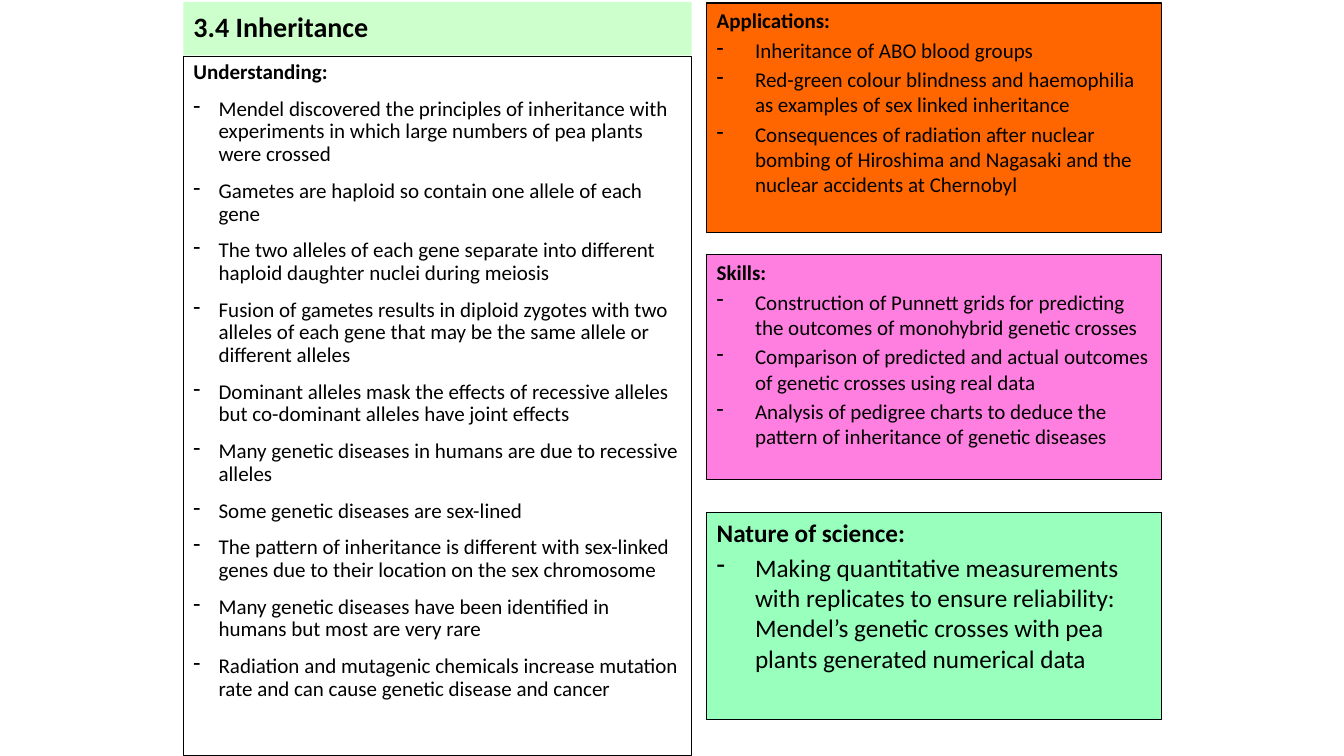
from dataclasses import dataclass
from typing import Any

from lxml import etree
from pptx import Presentation
from pptx import util as u
from pptx.dml.color import RGBColor
from pptx.enum import shapes, text
from pptx.oxml.ns import qn


@dataclass(frozen=True)
class Theme:
    font: str = "Calibri"
    ink: str = "000000"
    title_fill: str = "CCFFCC"
    applications_fill: str = "FF6600"
    skills_fill: str = "FF7FE1"
    nature_fill: str = "98FFBC"
    title_size: int = 20
    nature_size: int = 18
    body_size: int = 15
    border: float = 0.75


THEME = Theme()


@dataclass(frozen=True)
class Panel:
    heading: str
    points: tuple[str, ...]
    left: float
    top: float
    width: float
    height: float
    fill: str | None
    size: int = THEME.body_size
    indent: float = 0.38
    space_before: float = 3
    line_spacing: float = 1.0
    outlined: bool = True
    anchor: Any = text.MSO_ANCHOR.TOP


# Column positions
LEFT = {"left": 1.82, "width": 5.04, "line_spacing": 0.9}
RIGHT = {"left": 7.01, "width": 4.51}

PANELS = (
    Panel("3.4 Inheritance", (), top=0.02, height=0.53, fill=THEME.title_fill,
          size=THEME.title_size, outlined=False, anchor=text.MSO_ANCHOR.MIDDLE, **LEFT),
    Panel("Understanding:", (
        "Mendel discovered the principles of inheritance with experiments in which "
        "large numbers of pea plants were crossed",
        "Gametes are haploid so contain one allele of each gene",
        "The two alleles of each gene separate into different haploid daughter nuclei "
        "during meiosis",
        "Fusion of gametes results in diploid zygotes with two alleles of each gene "
        "that may be the same allele or different alleles",
        "Dominant alleles mask the effects of recessive alleles but co-dominant "
        "alleles have joint effects",
        "Many genetic diseases in humans are due to recessive alleles",
        "Some genetic diseases are sex-lined",
        "The pattern of inheritance is different with sex-linked genes due to their "
        "location on the sex chromosome",
        "Many genetic diseases have been identified in humans but most are very rare",
        "Radiation and mutagenic chemicals increase mutation rate and can cause "
        "genetic disease and cancer",
    ), top=0.56, height=6.94, fill=None, indent=0.25, space_before=10, **LEFT),
    Panel("Applications:", (
        "Inheritance of ABO blood groups",
        "Red-green colour blindness and haemophilia as examples of sex linked inheritance",
        "Consequences of radiation after nuclear bombing of Hiroshima and Nagasaki "
        "and the nuclear accidents at Chernobyl",
    ), top=0.03, height=2.28, fill=THEME.applications_fill, **RIGHT),
    Panel("Skills:", (
        "Construction of Punnett grids for predicting the outcomes of monohybrid "
        "genetic crosses",
        "Comparison of predicted and actual outcomes of genetic crosses using real data",
        "Analysis of pedigree charts to deduce the pattern of inheritance of genetic diseases",
    ), top=2.53, height=2.23, fill=THEME.skills_fill, **RIGHT),
    Panel("Nature of science:", (
        "Making quantitative measurements with replicates to ensure reliability: "
        "Mendel’s genetic crosses with pea plants generated numerical data",
    ), top=5.08, height=2.06, fill=THEME.nature_fill, size=THEME.nature_size,
          space_before=3.6, **RIGHT),
)


def apply_format(target: Any, values: dict[str, Any]) -> None:
    for name, value in values.items():
        setattr(target, name, value)


def add_dash(para: Any, indent: float) -> None:
    """Give a paragraph a dash bullet with a hanging indent."""
    properties = para._p.get_or_add_pPr()
    properties.set("marL", str(u.Inches(indent)))
    properties.set("indent", str(-u.Inches(indent)))
    etree.SubElement(properties, qn("a:buChar")).set("char", "-")


def write_para(para: Any, words: str, panel: Panel, bold: bool) -> None:
    apply_format(para, {
        "alignment": text.PP_ALIGN.LEFT,
        "line_spacing": panel.line_spacing,
        "space_before": u.Pt(panel.space_before),
    })
    span = para.add_run()
    span.text = words
    apply_format(span.font, {"name": THEME.font, "size": u.Pt(panel.size), "bold": bold})
    span.font.color.rgb = RGBColor.from_string(THEME.ink)


def draw_panel(page: Any, panel: Panel) -> None:
    box = page.shapes.add_shape(
        shapes.MSO_SHAPE.RECTANGLE, u.Inches(panel.left), u.Inches(panel.top),
        u.Inches(panel.width), u.Inches(panel.height))
    box.shadow.inherit = False

    # Fill and border
    if panel.fill:
        box.fill.solid()
        box.fill.fore_color.rgb = RGBColor.from_string(panel.fill)
    else:
        box.fill.background()
    if panel.outlined:
        box.line.color.rgb = RGBColor.from_string(THEME.ink)
        box.line.width = u.Pt(THEME.border)
    else:
        box.line.fill.background()

    # Heading and dashed points
    frame = box.text_frame
    apply_format(frame, {"word_wrap": True, "vertical_anchor": panel.anchor})
    write_para(frame.paragraphs[0], panel.heading, panel, bold=True)
    for point in panel.points:
        para = frame.add_paragraph()
        write_para(para, point, panel, bold=False)
        add_dash(para, panel.indent)


def main() -> None:
    deck = Presentation()
    apply_format(deck, {"slide_width": u.Inches(13.33), "slide_height": u.Inches(7.5)})
    page = deck.slides.add_slide(deck.slide_layouts[6])
    for panel in PANELS:
        draw_panel(page, panel)
    deck.save("out.pptx")


if __name__ == "__main__":
    main()
